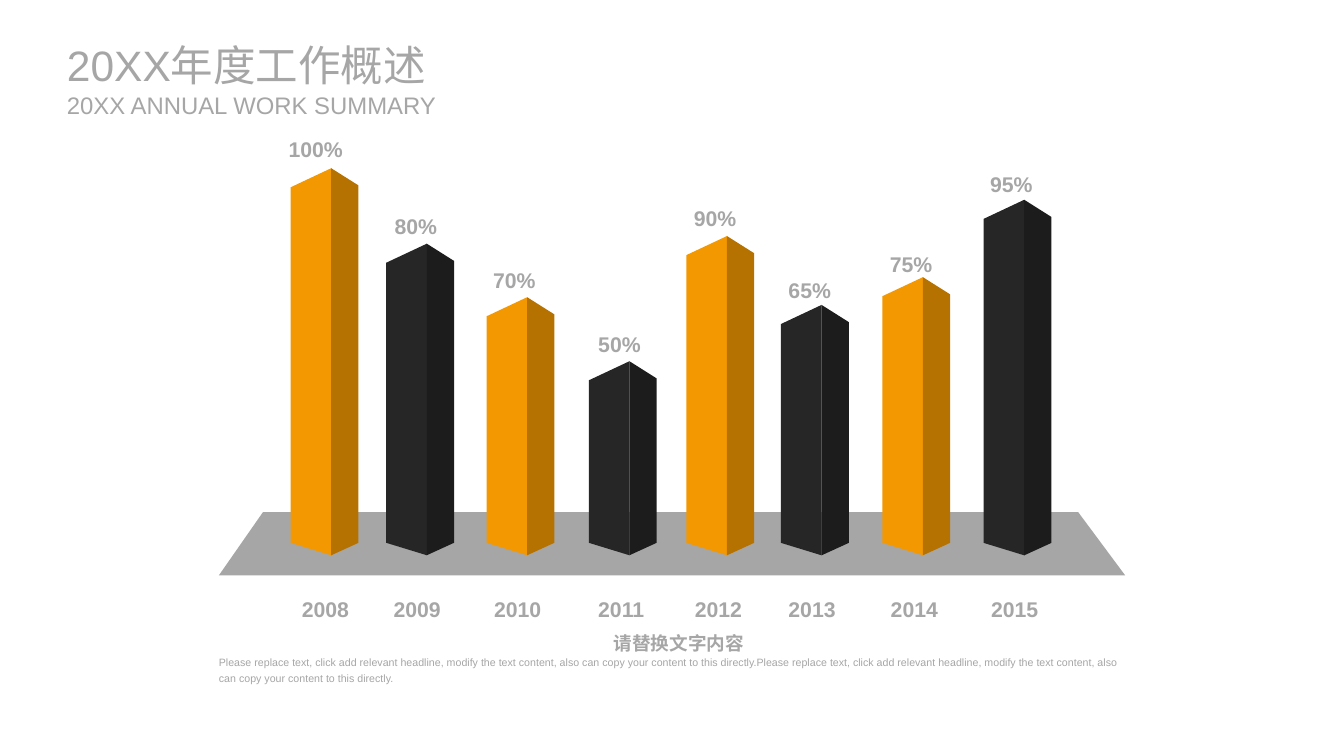
from dataclasses import dataclass
from typing import Any

from pptx import Presentation
from pptx import util as u
from pptx.dml import color
from pptx.enum import text as t

COLS, ROWS = 140.6, 79.1
CELL = u.Inches(0.1)
GREY = "A6A6A6"
GOLD = ("F39800", "B67200")
BLACK = ("262626", "1C1C1C")
FOOT, BASE = 58.1, 56.8
RIDGE, WIDE = 4.25, 7.1
YEAR_ROW = 61.4


@dataclass
class Bar:
    year: str
    share: str
    left: float
    top: float
    tag: tuple[float, float]
    year_col: float


@dataclass
class Label:
    words: str
    box: tuple[float, float, float, float]
    size: int
    bold: bool = False
    wrap: bool = True
    pad: tuple[float, float] = (0, 0)
    line: float = 1.2
    align: Any = t.PP_ALIGN.LEFT


BARS = [
    Bar("2008", "100%", 30.4, 17.6, (29.2, 13.2), 30.6),
    Bar("2009", "80%", 40.4, 25.5, (40.3, 21.3), 40.2),
    Bar("2010", "70%", 50.9, 31.1, (50.6, 26.9), 50.7),
    Bar("2011", "50%", 61.6, 37.8, (61.6, 33.6), 61.6),
    Bar("2012", "90%", 71.8, 24.7, (71.6, 20.5), 71.7),
    Bar("2013", "65%", 81.7, 31.9, (81.5, 28.0), 81.5),
    Bar("2014", "75%", 92.3, 29.0, (92.1, 25.3), 92.2),
    Bar("2015", "95%", 102.9, 20.9, (102.6, 16.9), 102.7),
]

BODY = ("Please replace text, click add relevant headline, modify the text content, "
        "also can copy your content to this directly.")

NOTES = [
    Label(BODY * 2, (22.9, 68.4, 94.7, 3.2), 8),
    Label("请替换文字内容", (64.2, 65.7, 13.7, 2.6), 14, bold=True, wrap=False),
    Label("20XX年度工作概述", (7, 4.1, 39.1, 5.4), 32, line=1.0),
    Label("20XX ANNUAL WORK SUMMARY", (7, 9.5, 39.1, 3), 18, line=1.0),
]


def cell(n: float) -> int:
    return round(n * CELL)


def paint(code: str) -> color.RGBColor:
    return color.RGBColor.from_string(code)


def apply(item: Any, form: dict[str, Any]) -> None:
    for key, val in form.items():
        setattr(item, key, val)


def draw_face(shapes: Any, dots: list[tuple[float, float]], code: str) -> None:
    spots = [(cell(x), cell(y)) for x, y in dots]
    pen = shapes.build_freeform(*spots[0])
    pen.add_line_segments(spots[1:], close=True)
    face = pen.convert_to_shape()
    face.shadow.inherit = False
    face.fill.solid()
    face.fill.fore_color.rgb = paint(code)
    face.line.fill.background()


def draw_label(shapes: Any, label: Label) -> None:
    frame = shapes.add_textbox(*map(cell, label.box)).text_frame
    side, edge = map(cell, label.pad)
    apply(frame, {
        "margin_left": side, "margin_right": side,
        "margin_top": edge, "margin_bottom": edge,
        "word_wrap": label.wrap,
        "auto_size": t.MSO_AUTO_SIZE.SHAPE_TO_FIT_TEXT,
    })
    para = frame.paragraphs[0]
    apply(para, {"alignment": label.align, "line_spacing": label.line})
    run = para.add_run()
    run.text = label.words
    apply(run.font, {"name": "Arial", "size": u.Pt(label.size), "bold": label.bold})
    run.font.color.rgb = paint(GREY)


def draw_bar(shapes: Any, bar: Bar, tones: tuple[str, str]) -> None:
    group = shapes.add_group_shape().shapes
    mid = bar.left + RIDGE
    sides = [(bar.left, 2.0), (bar.left + WIDE, 1.8)]
    for (edge, drop), tone in zip(sides, tones):
        draw_face(group, [(mid, FOOT), (edge, BASE), (edge, bar.top + drop),
                          (mid, bar.top)], tone)


def draw_tag(shapes: Any, words: str, left: float, top: float) -> None:
    wide = 7.8 if len(words) == 4 and words.endswith("%") else 6.5
    wide = 7 if words.isdigit() else wide
    draw_label(shapes, Label(words, (left, top, wide, 3.9), 16, True, False,
                             (1, 0.5), align=t.PP_ALIGN.JUSTIFY))


def main() -> None:
    deck = Presentation()
    apply(deck, {"slide_width": cell(COLS), "slide_height": cell(ROWS)})
    shapes = deck.slides.add_slide(deck.slide_layouts[6]).shapes
    draw_face(shapes, [(117.7, 60.2), (22.9, 60.2), (27.5, 53.6), (112.8, 53.6)], GREY)
    for i, bar in enumerate(BARS):
        draw_bar(shapes, bar, BLACK if i % 2 else GOLD)
    for bar in BARS:
        draw_tag(shapes, bar.share, *bar.tag)
        draw_tag(shapes, bar.year, bar.year_col, YEAR_ROW)
    for note in NOTES:
        draw_label(shapes, note)
    deck.save("out.pptx")


if __name__ == "__main__":
    main()
